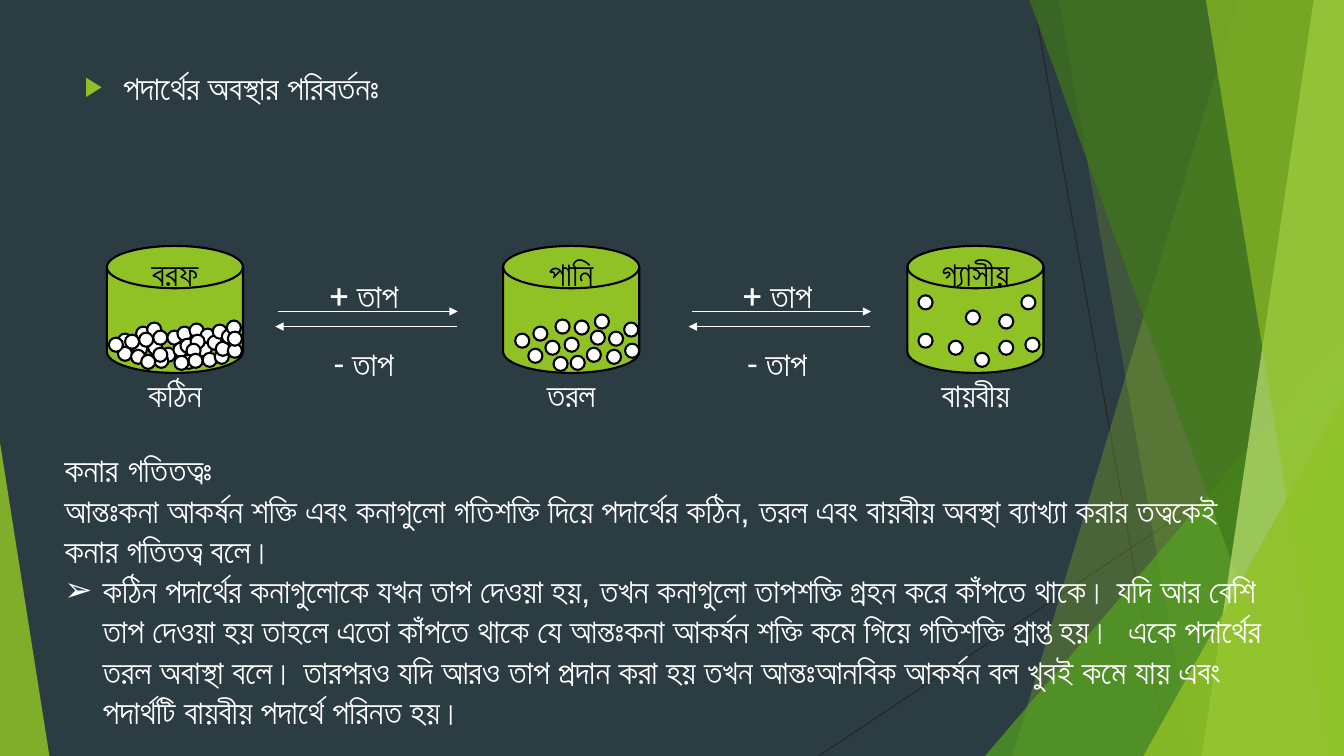
from pptx import Presentation
from pptx.dml.color import RGBColor
from pptx.enum import shapes, text
from pptx.oxml import ns, xmlchemy
from pptx.util import Inches, Pt

BACK = RGBColor(0x2C, 0x3C, 0x43)
LIME = RGBColor(0x90, 0xC2, 0x26)
GREEN = RGBColor(0x54, 0xA0, 0x21)
MOSS = RGBColor(0x3F, 0x78, 0x19)
PALE = RGBColor(0xC0, 0xE4, 0x74)
DARK = RGBColor(0x26, 0x26, 0x26)
WHITE = RGBColor(0xFF, 0xFF, 0xFF)
BLACK = RGBColor(0, 0, 0)
WIDE, HIGH = 13.33, 7.5
KIND = shapes.MSO_SHAPE

ICE = [
    (.11, .87), (.26, .95), (.41, .94), (.29, .8), (.4, .76), (.46, .84),
    (.54, 1.01), (.6, .84), (.66, .96), (.7, .8), (.73, .92), (.82, .77),
    (.9, .96), (.93, .82), (1, .89), (.83, .88), (.79, .97), (.74, 1.08),
    (.67, 1.09), (.47, 1.07), (.46, 1.01), (.32, .86), (.11, 1), (.18, .88),
    (.24, 1.03), (.81, 1.07), (.95, 1.06), (1.07, 1.03), (1.08, .95),
    (1.2, .97), (1.05, .78), (1.14, .83), (1.19, .74), (1.2, .85),
    (.34, 1.08), (.02, .91)]
WATER = [
    (.12, .87), (.25, 1.02), (.42, .94), (.3, .8), (.5, 1.1), (.71, .74),
    (.61, .91), (.87, .84), (.91, .68), (.67, 1.09), (.52, .73), (.83, 1.01),
    (1.03, 1.03), (1.21, .97), (1.05, .85), (1.2, .76)]
GAS = [
    (.11, .87), (.41, .94), (.58, .64), (.91, .68), (.67, 1.06), (.11, .49),
    (.91, .94), (1.17, .91), (1.13, .49)]
BEAKERS = [(1.06, "বরফ", "কঠিন", ICE), (4.99, "পানি", "তরল", WATER),
           (9, "গ্যাসীয়", "বায়বীয়", GAS)]
THEORY = [
    "কনার গতিতত্বঃ",
    "আন্তঃকনা আকর্ষন শক্তি এবং কনাগুলো গতিশক্তি দিয়ে পদার্থের কঠিন, তরল এবং "
    "বায়বীয় অবস্থা ব্যাখ্যা করার তত্বকেই কনার গতিতত্ব বলে।",
    "কঠিন পদার্থের কনাগুলোকে যখন তাপ দেওয়া হয়, তখন কনাগুলো তাপশক্তি গ্রহন করে "
    "কাঁপতে থাকে। যদি আর বেশি তাপ দেওয়া হয় তাহলে এতো কাঁপতে থাকে যে আন্তঃকনা "
    "আকর্ষন শক্তি কমে গিয়ে গতিশক্তি প্রাপ্ত হয়।  একে পদার্থের তরল অবাস্থা বলে। "
    "তারপরও যদি আরও তাপ প্রদান করা হয় তখন আন্তঃআনবিক আকর্ষন বল খুবই কমে যায় এবং "
    "পদার্থটি বায়বীয় পদার্থে পরিনত হয়।"]


def child(parent, tag, **attrs):
    node = xmlchemy.OxmlElement(tag)
    for key, value in attrs.items():
        node.set(key, value)
    parent.append(node)
    return node


def write(para, words, size=24, font="Roboto", color=WHITE, bold=False,
          align=text.PP_ALIGN.LEFT):
    para.alignment = align
    run = para.add_run()
    run.text = words
    run.font.size, run.font.name = Pt(size), font
    run.font.bold, run.font.color.rgb = bold, color


def bullet(para, mark, color=None, size=100):
    props = para._p.get_or_add_pPr()
    props.set("marL", str(Inches(.38)))
    props.set("indent", str(Inches(-.38)))
    if color is not None:
        child(child(props, "a:buClr"), "a:srgbClr", val=str(color))
    child(props, "a:buSzPct", val=str(size * 1000))
    child(props, "a:buFont", typeface="Arial")
    child(props, "a:buChar", char=mark)


def frame(slide, left, top, width, height):
    box = slide.shapes.add_textbox(*map(Inches, (left, top, width, height)))
    body = box.text_frame
    body.word_wrap = True
    body.vertical_anchor = text.MSO_ANCHOR.MIDDLE
    return body


def label(slide, words, left, mid, width, color=WHITE):
    body = frame(slide, left, mid - .25, width, .5)
    write(body.paragraphs[0], words, color=color, align=text.PP_ALIGN.CENTER)


def paint(shape, color, alpha=100, edge=None):
    shape.shadow.inherit = False
    shape.fill.solid()
    shape.fill.fore_color.rgb = color
    if alpha < 100:
        tint = next(shape._element.spPr.iter(ns.qn("a:srgbClr")))
        child(tint, "a:alpha", val=str(alpha * 1000))
    if edge is None:
        shape.line.fill.background()
    else:
        shape.line.color.rgb = edge
        shape.line.width = Pt(1.5)


def line(group, start, end, color, width, arrow=False):
    link = group.add_connector(shapes.MSO_CONNECTOR.STRAIGHT,
                               *map(Inches, start + end))
    link.line.color.rgb, link.line.width = color, Pt(width)
    if arrow:
        child(link.line._get_or_add_ln(), "a:tailEnd", type="triangle")
    child(link._element.spPr, "a:effectLst")


def shard(group, top, base, color, alpha):
    form = group.build_freeform(Inches(top), 0)
    form.add_line_segments([(Inches(x), Inches(y)) for x, y in
                            [(WIDE, 0), (WIDE, HIGH), (base, HIGH)]])
    paint(form.convert_to_shape(), color, alpha)


def wedge(group, left, top, width, tip, color, alpha):
    shape = group.add_shape(KIND.ISOSCELES_TRIANGLE, *map(
        Inches, (left, top, width, HIGH - top)))
    shape.adjustments[0] = tip
    paint(shape, color, alpha)


def decor(slide):
    group = slide.shapes.add_group_shape().shapes
    line(group, (10.25, 0), (11.58, HIGH), DARK, .75)
    line(group, (WIDE, 4.03), (8.12, HIGH), DARK, .75)
    shard(group, 12.28, 10.04, LIME, 30)
    shard(group, 10.5, 11.83, LIME, 20)
    wedge(group, 9.77, 3.33, 3.56, 1, GREEN, 72)
    shard(group, 10.21, 12.91, MOSS, 70)
    shard(group, 13.03, 11.92, PALE, 70)
    shard(group, 11.96, 13.18, LIME, 65)
    wedge(group, 11.34, 3.93, 1.99, 1, LIME, 80)
    wedge(group, 0, 4.39, .49, 0, LIME, 85)


def heading(slide, left, top, width, height):
    title = slide.shapes.title
    title.left, title.top = Inches(left), Inches(top)
    title.width, title.height = Inches(width), Inches(height)
    body = title.text_frame
    body.auto_size = text.MSO_AUTO_SIZE.NONE
    body.vertical_anchor = text.MSO_ANCHOR.TOP
    write(body.paragraphs[0], "পদার্থের অবস্থার পরিবর্তনঃ")
    bullet(body.paragraphs[0], "▶", LIME, 80)


def beaker(slide, left, top, name, state, dots):
    group = slide.shapes.add_group_shape().shapes
    disk = group.add_shape(KIND.FLOWCHART_MAGNETIC_DISK, *map(
        Inches, (left, top, 1.35, 1.26)))
    paint(disk, LIME, edge=BLACK)
    for x, y in dots:
        dot = group.add_shape(KIND.OVAL, *map(
            Inches, (left + x, top + y, .14, .14)))
        paint(dot, WHITE, edge=BLACK)
    label(slide, name, left - .16, top + .27, 1.67, BLACK)
    label(slide, state, left - .16, top + 1.47, 1.67)


def heat(slide, left, top):
    line(slide.shapes, (left + .03, top), (left + 1.81, top), WHITE, 1, True)
    line(slide.shapes, (left + 1.8, top + .15), (left, top + .15), WHITE, 1, True)
    label(slide, "+ তাপ", left - .33, top - .16, 2.42)
    label(slide, "- তাপ", left - .33, top + .51, 2.42)


def theory(slide, left, top, width, height):
    body = frame(slide, left, top, width, height)
    for i, words in enumerate(THEORY):
        para = body.add_paragraph() if i else body.paragraphs[0]
        write(para, words, font="Arial", bold=i == 0)
    bullet(para, "➢")


def main():
    deck = Presentation()
    deck.slide_width, deck.slide_height = Inches(WIDE), Inches(HIGH)
    slide = deck.slides.add_slide(deck.slide_layouts[5])
    slide.background.fill.solid()
    slide.background.fill.fore_color.rgb = BACK
    decor(slide)
    heading(slide, .74, .61, 12.03, .6)
    for left, name, state, dots in BEAKERS:
        beaker(slide, left, 2.44, name, state, dots)
    for left in (2.73, 6.83):
        heat(slide, left, 3.09)
    theory(slide, .54, 4.51, 12.23, 2.69)
    deck.save("out.pptx")


if __name__ == "__main__":
    main()
